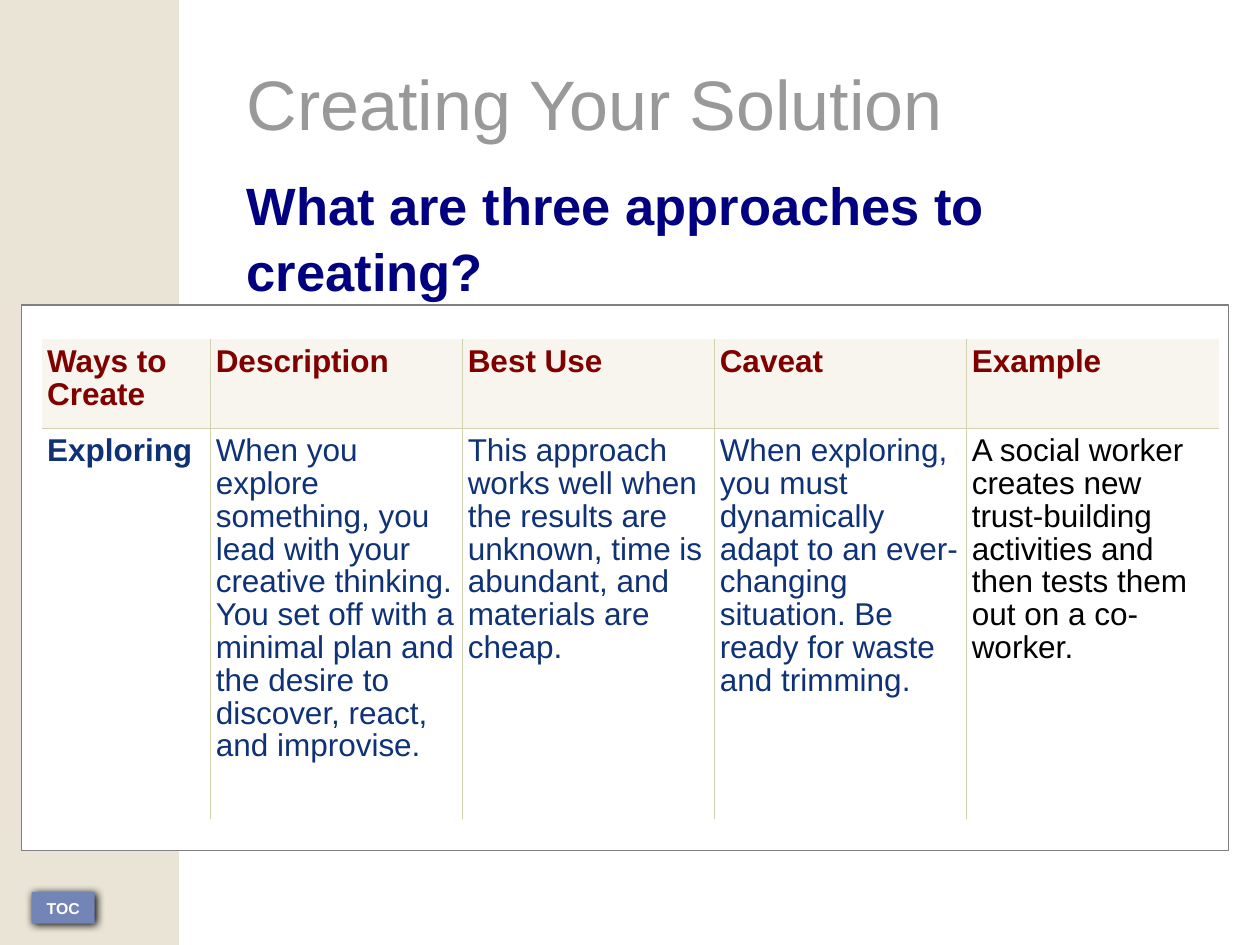
from lxml import etree
from pptx import Presentation
from pptx.dml.color import RGBColor
from pptx.enum.shapes import MSO_SHAPE
from pptx.enum.text import MSO_ANCHOR, MSO_AUTO_SIZE, PP_ALIGN
from pptx.oxml.ns import qn
from pptx.util import Cm, Pt

RECTANGLE = MSO_SHAPE.RECTANGLE
ROUNDED = MSO_SHAPE.ROUNDED_RECTANGLE
LEFT, CENTER = PP_ALIGN.LEFT, PP_ALIGN.CENTER
TOP, MIDDLE = MSO_ANCHOR.TOP, MSO_ANCHOR.MIDDLE
NO_AUTOFIT = MSO_AUTO_SIZE.NONE

BLACK = RGBColor(0x00, 0x00, 0x00)
WHITE = RGBColor(0xFF, 0xFF, 0xFF)
BEIGE = RGBColor(0xE9, 0xE4, 0xD5)
CREAM = RGBColor(0xF7, 0xF5, 0xED)
RULE = RGBColor(0xD1, 0xD1, 0xB0)
BUTTON_BLUE = RGBColor(0x73, 0x84, 0xB6)
TITLE_GRAY = RGBColor(0x99, 0x99, 0x99)
FRAME_GRAY = RGBColor(0x80, 0x80, 0x80)
NAVY = RGBColor(0x00, 0x00, 0x80)
INK_BLUE = RGBColor(0x0F, 0x32, 0x77)
MAROON = RGBColor(0x80, 0x00, 0x00)

HEADINGS = ["Ways to Create", "Description", "Best Use", "Caveat", "Example"]
EXPLORING = [
    "Exploring",
    "When you explore something, you lead with your creative thinking. You set off "
    "with a minimal plan and the desire to discover, react, and improvise.",
    "This approach works well when the results are unknown, time is abundant, "
    "and materials are cheap.",
    "When exploring, you must dynamically adapt to an ever-changing situation. "
    "Be ready for waste and trimming.",
    "A social worker creates new trust-building activities and then tests them "
    "out on a co-worker.",
]


def write(paragraph, text, size, color, bold=False, align=LEFT, spacing=1.0, after=0):
    paragraph.alignment = align
    paragraph.line_spacing = spacing
    paragraph.space_before = Pt(0)
    paragraph.space_after = Pt(after)
    run = paragraph.add_run()
    run.text = text
    run.font.name = "Arial"
    run.font.size = Pt(size)
    run.font.bold = bold
    run.font.color.rgb = color


def add_panel(slide, kind, box, fill, outline=None):
    panel = slide.shapes.add_shape(kind, *(Cm(length) for length in box))
    panel.shadow.inherit = False
    panel.fill.solid()
    panel.fill.fore_color.rgb = fill
    if outline is None:
        panel.line.fill.background()
    else:
        panel.line.color.rgb = outline
        panel.line.width = Pt(0.71)
    return panel


def add_sidebar(slide, box):
    left, top, width, height = box
    add_panel(slide, RECTANGLE, box, BEIGE)

    # Contents button near the bottom edge
    button = add_panel(slide, RECTANGLE, (left + 0.64, top + height - 1.07, 1.27, 0.64),
                       BUTTON_BLUE)
    effects = button._element.spPr.find(qn("a:effectLst"))
    shadow = etree.SubElement(effects, qn("a:outerShdw"), blurRad=str(Pt(5)),
                              dist=str(Pt(1.4)), dir=str(45 * 60000))
    etree.SubElement(shadow, qn("a:srgbClr"), val=str(BLACK))
    frame = button.text_frame
    frame.word_wrap = False
    frame.vertical_anchor = MIDDLE
    write(frame.paragraphs[0], "TOC", 9, WHITE, bold=True, align=CENTER)


def place_title(slide, box):
    title = slide.shapes.title
    title.left, title.top, title.width, title.height = (Cm(length) for length in box)
    frame = title.text_frame
    frame.word_wrap = True
    frame.auto_size = NO_AUTOFIT
    frame.vertical_anchor = TOP
    frame.margin_top = Cm(0.25)
    write(frame.paragraphs[0], "Creating Your Solution", 40, TITLE_GRAY, after=14.4)
    write(frame.add_paragraph(), "What are three approaches to creating?", 30, NAVY,
          bold=True, spacing=1.05, after=5.8)


def set_borders(cell, visible_sides):
    properties = cell._tc.get_or_add_tcPr()
    for side in "LRTB":
        border = etree.SubElement(properties, qn(f"a:ln{side}"), w=str(Pt(0.57)))
        if side in visible_sides:
            fill = etree.SubElement(border, qn("a:solidFill"))
            etree.SubElement(fill, qn("a:srgbClr"), val=str(RULE))
        else:
            etree.SubElement(border, qn("a:noFill"))


def add_approach_table(slide, box):
    left, top, width, height = box
    frame = add_panel(slide, ROUNDED, box, WHITE, outline=FRAME_GRAY)
    frame.adjustments[0] = 0

    # Table inside the frame: a narrow first column, then equal ones
    column_widths = [3.4] + [5.08] * (len(HEADINGS) - 1)
    row_heights = [1.8, 7.87]
    table = slide.shapes.add_table(
        len(row_heights), len(column_widths), Cm(left + 0.42), Cm(top + 0.68),
        Cm(sum(column_widths)), Cm(sum(row_heights))).table
    table.first_row = table.horz_banding = False
    for column, column_width in zip(table.columns, column_widths):
        column.width = Cm(column_width)
    for row, row_height in zip(table.rows, row_heights):
        row.height = Cm(row_height)

    last = len(HEADINGS) - 1
    for r, texts in enumerate([HEADINGS, EXPLORING]):
        for c, text in enumerate(texts):
            cell = table.cell(r, c)
            # Only inner rules are drawn
            inner = ("L" if c > 0 else "") + ("R" if c < last else "")
            set_borders(cell, inner + ("T" if r else "B"))
            cell.fill.solid()
            cell.fill.fore_color.rgb = WHITE if r else CREAM
            cell.margin_left = cell.margin_right = cell.margin_bottom = Cm(0.1)
            cell.margin_top = Cm(0.15)
            if r == 0:
                color = MAROON
            else:
                color = BLACK if c == last else INK_BLUE
            write(cell.text_frame.paragraphs[0], text, 18, color,
                  bold=r == 0 or c == 0, spacing=0.93)


def main():
    deck = Presentation()
    deck.slide_width, deck.slide_height = Cm(25.4), Cm(19.05)
    slide = deck.slides.add_slide(deck.slide_layouts[5])
    add_sidebar(slide, (0, 0, 3.61, 19.05))
    place_title(slide, (4.72, 0.97, 19.15, 6.65))
    add_approach_table(slide, (0.43, 6.15, 24.33, 11))
    deck.save("out.pptx")


if __name__ == "__main__":
    main()
